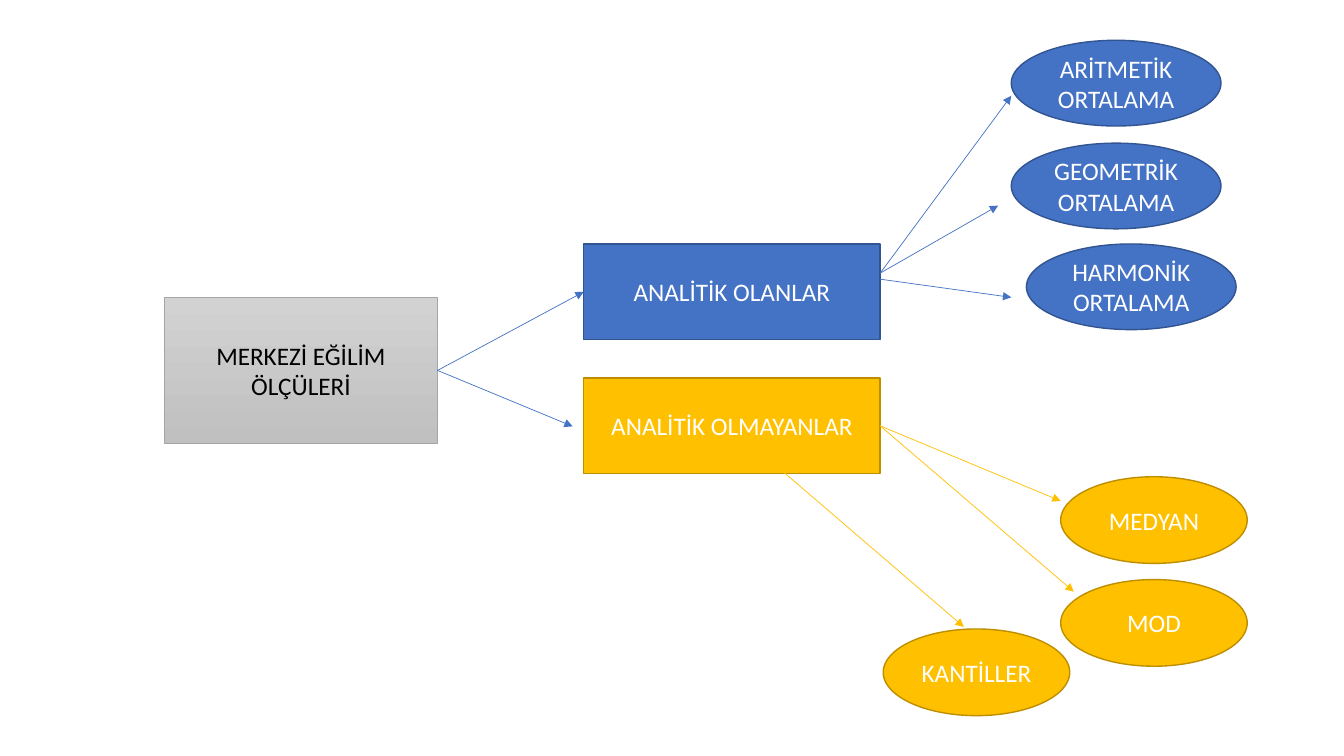
from pptx import Presentation
from pptx.dml.color import RGBColor
from pptx.enum.shapes import MSO_CONNECTOR as Connector, MSO_SHAPE as Shape
from pptx.enum.text import MSO_ANCHOR as Anchor, PP_ALIGN as Align
from pptx.oxml.ns import qn
from pptx.util import Inches, Pt
from lxml import etree

BLUE, BLUE_EDGE = "4472C4", "325491"
GOLD, GOLD_EDGE = "FFC000", "BD8E00"
RIGHT, LEFT = 3, 1


def color(hex_value):
    return RGBColor.from_string(hex_value)


def add_node(slide, kind, box, text, fill, edge, text_color="FFFFFF", edge_width=1):
    """Add a labelled shape; a pair of fill colours makes a vertical gradient."""
    shape = slide.shapes.add_shape(kind, *map(Inches, box))
    shape.shadow.inherit = False
    if isinstance(fill, tuple):
        shape.fill.gradient()
        shape.fill.gradient_angle = 270
        for stop, hex_value in zip(shape.fill.gradient_stops, fill):
            stop.color.rgb = color(hex_value)
    else:
        shape.fill.solid()
        shape.fill.fore_color.rgb = color(fill)
    shape.line.color.rgb = color(edge)
    shape.line.width = Pt(edge_width)

    frame = shape.text_frame
    frame.word_wrap = True
    frame.vertical_anchor = Anchor.MIDDLE
    paragraph = frame.paragraphs[0]
    paragraph.alignment = Align.CENTER
    run = paragraph.add_run()
    run.text = text
    for name, value in {"name": "Calibri", "size": Pt(18)}.items():
        setattr(run.font, name, value)
    run.font.color.rgb = color(text_color)
    return shape


def add_arrow(slide, start, end, hex_value, source=None, target=None):
    """Add a thin arrow, joined to the source's right and target's left side."""
    arrow = slide.shapes.add_connector(
        Connector.STRAIGHT, *map(Inches, (*start, *end)))
    arrow.line.color.rgb = color(hex_value)
    arrow.line.width = Pt(0.5)
    etree.SubElement(arrow.line._get_or_add_ln(), qn("a:tailEnd"), type="triangle")
    etree.SubElement(arrow._element.spPr, qn("a:effectLst"))
    if source is not None:
        arrow.begin_connect(source, RIGHT)
    if target is not None:
        arrow.end_connect(target, LEFT)


def add_root(slide, box):
    return add_node(slide, Shape.RECTANGLE, box, "MERKEZİ EĞİLİM ÖLÇÜLERİ",
                    ("D2D2D2", "C0C0C0"), "A5A5A5", "000000", 0.5)


def add_branch(slide, box, text, fill, edge, leaf_size, leaves, arrows):
    """Add a branch box with its leaves and arrows, offset from the box corner."""
    left, top, width, height = box
    branch = add_node(slide, Shape.RECTANGLE, box, text, fill, edge)
    for label, x, y in leaves:
        add_node(slide, Shape.OVAL, (left + x, top + y, *leaf_size), label, fill, edge)
    for (x1, y1), (x2, y2) in arrows:
        at_side = (x1, y1) == (width, height / 2)
        add_arrow(slide, (left + x1, top + y1), (left + x2, top + y2), fill,
                  source=branch if at_side else None)
    return branch


def build_slide(presentation):
    slide = presentation.slides.add_slide(presentation.slide_layouts[6])
    root = add_root(slide, (1.63, 2.95, 2.71, 1.45))
    width, height = 2.94, 0.95
    side = (width, height / 2)

    # Analytic measures
    analytic = add_branch(
        slide, (5.79, 2.42, width, height), "ANALİTİK OLANLAR",
        BLUE, BLUE_EDGE, (2.08, 0.85),
        [("ARİTMETİK ORTALAMA", 4.24, -2.02),
         ("GEOMETRİK ORTALAMA", 4.24, -1),
         ("HARMONİK ORTALAMA", 4.39, 0)],
        [((width, 0.29), (4.24, -1.47)),
         ((width, 0.29), (4.11, -0.38)),
         ((width, 0.35), (4.24, 0.53))])

    # Non-analytic measures
    add_branch(
        slide, (5.79, 3.75, width, height), "ANALİTİK OLMAYANLAR",
        GOLD, GOLD_EDGE, (1.85, 0.86),
        [("MEDYAN", 4.73, 0.98), ("MOD", 4.73, 2), ("KANTİLLER", 2.97, 2.49)],
        [(side, (4.73, 1.22)),
         (side, (4.86, 2.12)),
         ((1.85, 0.82), (3.77, 2.47))])

    # Arrows from the root to both branches
    add_arrow(slide, (4.34, 3.68), (5.79, 2.9), BLUE, root, analytic)
    add_arrow(slide, (4.34, 3.68), (5.68, 4.23), BLUE, root)


def main():
    presentation = Presentation()
    presentation.slide_width = Inches(13.33)
    presentation.slide_height = Inches(7.5)
    build_slide(presentation)
    presentation.save("out.pptx")


if __name__ == "__main__":
    main()
